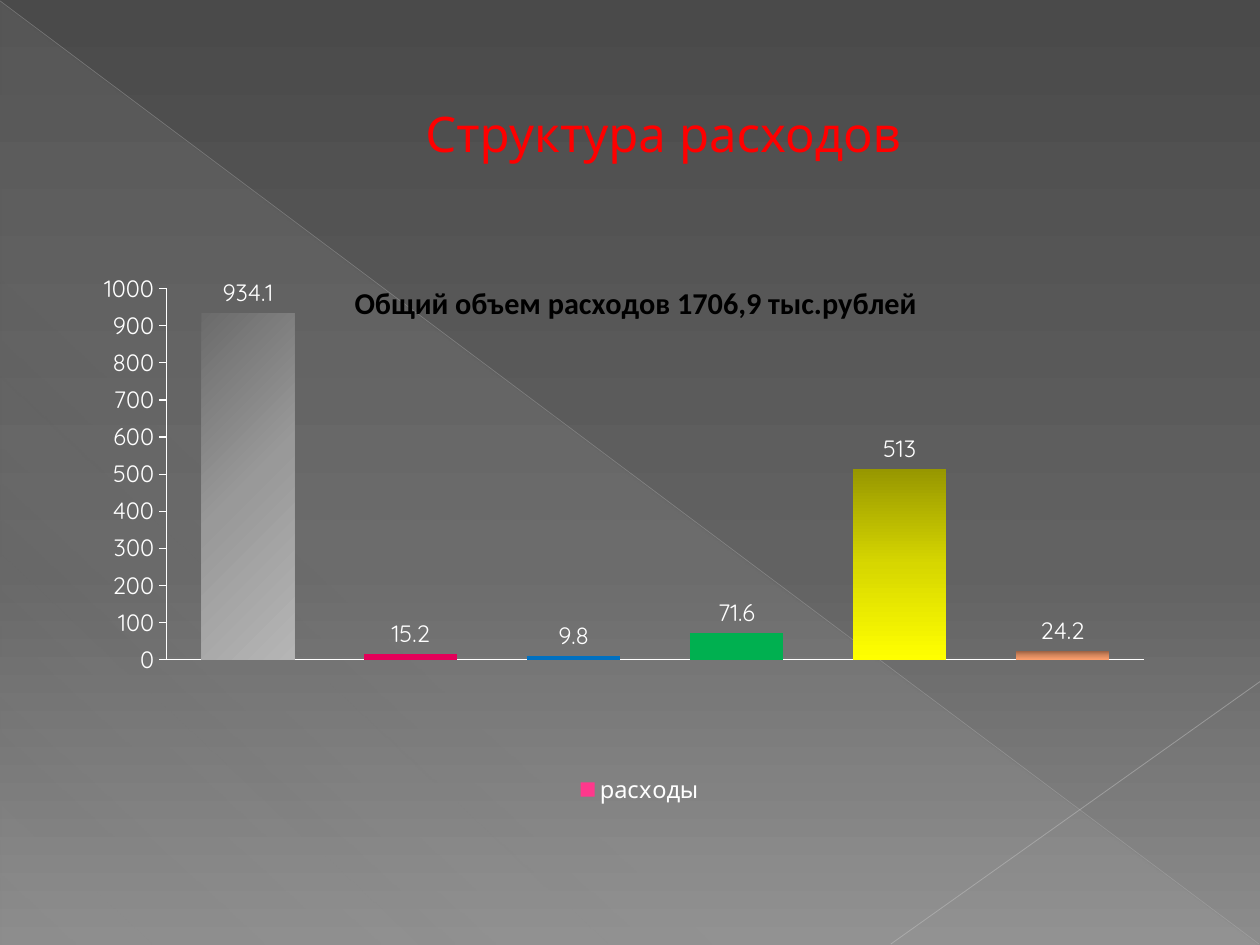
from lxml import etree
from pptx import Presentation
from pptx.chart import data as chart_data
from pptx.dml.color import RGBColor
from pptx.enum import chart as ch, shapes, text
from pptx.oxml import parse_xml
from pptx.oxml.ns import nsdecls, qn
from pptx.util import Pt

WHITE = RGBColor(0xFF, 0xFF, 0xFF)
BLACK = RGBColor(0, 0, 0)
RED = RGBColor(0xFF, 0, 0)
PINK = RGBColor(0xFF, 0x38, 0x8C)
CRIMSON = RGBColor(0xE4, 0x00, 0x59)
BLUE = RGBColor(0x00, 0x70, 0xC0)
GREEN = RGBColor(0x00, 0xB0, 0x50)
OUTLINE = RGBColor(0xB1, 0x27, 0x61)
PALE = RGBColor(0xD2, 0xD2, 0xD2)
LINE_LONG = RGBColor(0xBF, 0xBF, 0xBF)
LINE_SHORT = RGBColor(0xC6, 0xC6, 0xC6)
BACKDROP = [(0, RGBColor(0x4A, 0x4A, 0x4A)), (60, RGBColor(0x62, 0x62, 0x62)),
            (100, RGBColor(0x8C, 0x8C, 0x8C))]
GREYS = [(0, RGBColor(0x6B, 0x6B, 0x6B)), (50, RGBColor(0x99, 0x99, 0x99)),
         (100, RGBColor(0xB5, 0xB5, 0xB5))]
YELLOWS = [(0, RGBColor(0x97, 0x97, 0x00)), (50, RGBColor(0xD7, 0xD7, 0x00)),
           (100, RGBColor(0xFF, 0xFF, 0x00))]
ORANGES = [(0, RGBColor(0x96, 0x5E, 0x40)), (50, RGBColor(0xD5, 0x86, 0x5C)),
           (100, RGBColor(0xFC, 0x9F, 0x6D))]
FONT = "Quicksand"


def set_gradient(fill, stops, angle):
    """Fill with (position, colour[, opacity]) stops, in percent; angle is clockwise."""
    fill.solid()
    solid = fill._xPr.find(qn("a:solidFill"))
    marks = "".join(
        f'<a:gs pos="{pos * 1000}"><a:srgbClr val="{color}">'
        + "".join(f'<a:alpha val="{a * 1000}"/>' for a in opacity)
        + "</a:srgbClr></a:gs>"
        for pos, color, *opacity in stops)
    solid.getparent().replace(solid, parse_xml(
        f'<a:gradFill rotWithShape="1" {nsdecls("a")}><a:gsLst>{marks}</a:gsLst>'
        f'<a:lin ang="{angle * 60000}" scaled="0"/></a:gradFill>'))


def set_layout(parent, before, x, y, w=None, h=None):
    """Place a chart part by fractions of the chart area."""
    for old in parent.findall(qn("c:layout")):
        parent.remove(old)
    sizes = [("xMode", "edge"), ("yMode", "edge"), ("x", x), ("y", y)]
    if w:
        sizes = [("layoutTarget", "inner")] + sizes + [("w", w), ("h", h)]
    parts = "".join(f'<c:{name} val="{value}"/>' for name, value in sizes)
    parent.find(qn(before)).addprevious(parse_xml(
        f'<c:layout {nsdecls("c")}><c:manualLayout>{parts}</c:manualLayout></c:layout>'))


deck = Presentation()
deck.slide_width, deck.slide_height = Pt(720), Pt(540)
page = deck.slides.add_slide(deck.slide_layouts[6])

# Background with a translucent triangle and two thin lines
set_gradient(page.background.fill, BACKDROP, 90)
triangle = page.shapes.add_shape(shapes.MSO_SHAPE.RIGHT_TRIANGLE,
                                 Pt(0.5), Pt(1), Pt(719), Pt(539))
triangle.shadow.inherit = False
triangle.line.fill.background()
set_gradient(triangle.fill, [(0, PALE, 10), (70, PALE, 8), (100, PALE, 1)], 133)

for x1, y1, x2, y2, color, width, opacity in [
        (0, 0.5, 719.5, 539.5, LINE_LONG, 0.39, 35),
        (720, 389.5, 509, 539.5, LINE_SHORT, 0.47, 45)]:
    line = page.shapes.add_connector(shapes.MSO_CONNECTOR.STRAIGHT,
                                     Pt(x1), Pt(y1), Pt(x2), Pt(y2))
    line.line.width = Pt(width)
    line.line.color.rgb = color
    shade = line.line.fill._xPr.find(".//" + qn("a:srgbClr"))
    etree.SubElement(shade, qn("a:alpha")).set("val", str(opacity * 1000))
    etree.SubElement(line._element.spPr, qn("a:effectLst"))

# Slide title
box = page.shapes.add_textbox(Pt(36), Pt(21), Pt(648), Pt(110))
frame = box.text_frame
frame.word_wrap = True
frame.vertical_anchor = text.MSO_ANCHOR.MIDDLE
para = frame.paragraphs[0]
para.alignment = text.PP_ALIGN.CENTER
para._p.get_or_add_pPr().set("marL", str(Pt(38)))
span = para.add_run()
span.text = "Структура расходов"
span.font.size = Pt(28)
span.font.name = FONT
span.font.color.rgb = RED
span._r.get_or_add_rPr().insert(0, parse_xml(
    f'<a:ln w="{Pt(0.5)}" {nsdecls("a")}><a:solidFill>'
    f'<a:srgbClr val="{OUTLINE}"/></a:solidFill></a:ln>'))

# Column chart of expenses
expenses = chart_data.CategoryChartData(number_format="General")
expenses.categories = ["1", "2", "3", "4", "5", "6"]
expenses.add_series("расходы", [934.1, 15.2, 9.8, 71.6, 513, 24.2])
chart = page.shapes.add_chart(ch.XL_CHART_TYPE.COLUMN_CLUSTERED, Pt(24.5), Pt(122.5),
                              Pt(673), Pt(396.5), expenses).chart
chart.font.size = Pt(17.3)
chart.font.name = FONT
chart.font.color.rgb = WHITE

# Chart title, laid over the plot
chart.has_title = True
span = chart.chart_title.text_frame.paragraphs[0].add_run()
span.text = "Общий объем расходов 1706,9 тыс.рублей"
span.font.size = Pt(17.3)
span.font.bold = True
span.font.name = "Calibri"
span.font.color.rgb = BLACK
heading = chart.chart_title._element
chart.chart_title.include_in_layout = True
for old in heading.findall(qn("c:overlay")):
    heading.remove(old)
heading.find(qn("c:tx")).addnext(parse_xml(f'<c:overlay val="1" {nsdecls("c")}/>'))
set_layout(heading, "c:overlay", 0.26, 0.09)

# Legend
chart.has_legend = True
legend = chart.legend
legend.position = ch.XL_LEGEND_POSITION.BOTTOM
legend.include_in_layout = False
legend.font.size = Pt(13.5)
legend.font.name = FONT
legend.font.color.rgb = WHITE
set_layout(legend._element, "c:overlay", 0.45, 0.8)

# Axes
for axis in (chart.category_axis, chart.value_axis):
    axis.has_major_gridlines = False
    axis.format.line.color.rgb = WHITE
    axis.format.line.width = Pt(0.75)
    axis.tick_labels.font.size = Pt(13.5)
    axis.tick_labels.font.name = FONT
    axis.tick_labels.font.color.rgb = WHITE
chart.category_axis.major_tick_mark = ch.XL_TICK_MARK.NONE
chart.category_axis.tick_label_position = ch.XL_TICK_LABEL_POSITION.NONE
chart.value_axis.major_tick_mark = ch.XL_TICK_MARK.OUTSIDE
chart.value_axis.minimum_scale = 0
chart.value_axis.maximum_scale = 1000
chart.value_axis.major_unit = 100

# Columns and their values
plot = chart.plots[0]
plot.gap_width = 75
plot.vary_by_categories = False
set_layout(plot._element.getparent(), "c:barChart", 0.105, 0.107, 0.83, 0.535)
series = plot.series[0]
series.format.fill.solid()
series.format.fill.fore_color.rgb = PINK
for index, color in enumerate([None, CRIMSON, BLUE, GREEN]):
    if color is not None:
        fill = series.points[index].format.fill
        fill.solid()
        fill.fore_color.rgb = color
for index, stops, angle in [(0, GREYS, 45), (4, YELLOWS, 90), (5, ORANGES, 90)]:
    set_gradient(series.points[index].format.fill, stops, angle)

plot.has_data_labels = True
labels = plot.data_labels
labels.show_value = True
labels.position = ch.XL_LABEL_POSITION.OUTSIDE_END
labels.font.size = Pt(13.5)
labels.font.name = FONT
labels.font.color.rgb = WHITE

deck.save("out.pptx")
